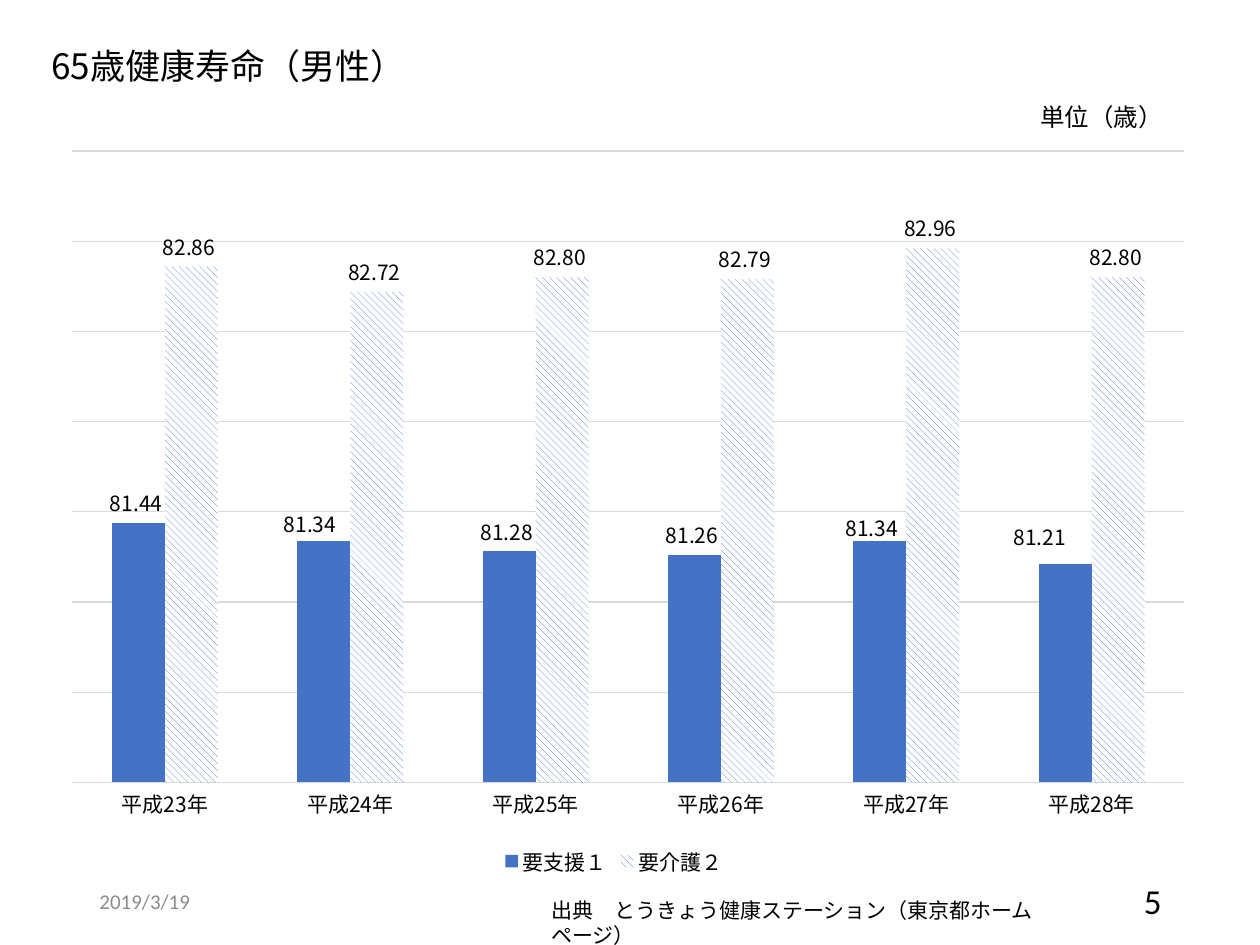
from pptx import Presentation
from pptx.chart.data import CategoryChartData
from pptx.dml.color import RGBColor
from pptx.enum.chart import XL_CHART_TYPE, XL_LABEL_POSITION, XL_LEGEND_POSITION, XL_TICK_MARK
from pptx.enum.dml import MSO_PATTERN
from pptx.enum.text import MSO_ANCHOR, MSO_AUTO_SIZE, PP_ALIGN
from pptx.oxml import parse_xml
from pptx.oxml.ns import nsdecls, qn
from pptx.util import Emu, Pt

COLUMN = XL_CHART_TYPE.COLUMN_CLUSTERED
OUTSIDE_END = XL_LABEL_POSITION.OUTSIDE_END
BOTTOM = XL_LEGEND_POSITION.BOTTOM
NO_TICK = XL_TICK_MARK.NONE
STRIPES = MSO_PATTERN.WIDE_DOWNWARD_DIAGONAL
TOP, MIDDLE = MSO_ANCHOR.TOP, MSO_ANCHOR.MIDDLE
GROW, FIXED = MSO_AUTO_SIZE.SHAPE_TO_FIT_TEXT, MSO_AUTO_SIZE.NONE
LEFT, RIGHT = PP_ALIGN.LEFT, PP_ALIGN.RIGHT

BLACK = RGBColor(0x00, 0x00, 0x00)
WHITE = RGBColor(0xFF, 0xFF, 0xFF)
BLUE = RGBColor(0x44, 0x72, 0xC4)
LIGHT_GRAY = RGBColor(0xD9, 0xD9, 0xD9)
GRAY = RGBColor(0x8C, 0x8C, 0x8C)

JAPANESE = "Noto Sans CJK JP"
LATIN = "Calibri"
NUMBER_FORMAT = r"0.00_);[Red]\(0.00\)"
EMU_PER_PX = 914400 / 126

YEARS = [f"平成{year}年" for year in range(23, 29)]
SERIES = {
    "要支援１": (81.44, 81.34, 81.28, 81.26, 81.34, 81.21),
    "要介護２": (82.86, 82.72, 82.80, 82.79, 82.96, 82.80),
}
LABEL_SHIFTS = {1: (-0.01, 0.005), 4: (-0.005, 0.01), 5: (-0.02, -0.01)}


def px(*lengths):
    return [Emu(round(length * EMU_PER_PX)) for length in lengths]


def style_font(font, size, color=BLACK, name=JAPANESE):
    for attribute, value in {"size": Pt(size), "name": name}.items():
        setattr(font, attribute, value)
    font.color.rgb = color


def add_text(slide, box, text, size, color=BLACK, name=JAPANESE, **options):
    text_box = slide.shapes.add_textbox(*px(*box))
    frame = text_box.text_frame
    settings = {"word_wrap": True, "auto_size": GROW, "vertical_anchor": TOP}
    alignment = options.pop("alignment", LEFT)
    for attribute, value in (settings | options).items():
        setattr(frame, attribute, value)
    paragraph = frame.paragraphs[0]
    paragraph.alignment = alignment
    run = paragraph.add_run()
    run.text = text
    style_font(run.font, size, color, name)


def make_layout(**values):
    children = "".join(f'<c:{tag} val="{value}"/>' for tag, value in values.items())
    return parse_xml(
        f"<c:layout {nsdecls('c')}><c:manualLayout>{children}</c:manualLayout></c:layout>"
    )


def style_line(line):
    line.color.rgb = LIGHT_GRAY
    line.width = Pt(0.75)


def style_axes(chart):
    category_axis, value_axis = chart.category_axis, chart.value_axis
    category_axis.major_tick_mark = NO_TICK
    style_font(category_axis.tick_labels.font, 12)
    style_line(category_axis.format.line)
    settings = {
        "minimum_scale": 80,
        "maximum_scale": 83.5,
        "major_unit": 0.5,
        "has_major_gridlines": True,
        "visible": False,
    }
    for attribute, value in settings.items():
        setattr(value_axis, attribute, value)
    style_line(value_axis.major_gridlines.format.line)


def style_labels(series):
    labels = series.data_labels
    settings = {
        "show_value": True,
        "number_format": NUMBER_FORMAT,
        "number_format_is_linked": False,
        "position": OUTSIDE_END,
    }
    for attribute, value in settings.items():
        setattr(labels, attribute, value)
    style_font(labels.font, 12)


def shift_label(series, index, x, y):
    label = series.points[index].data_label
    label.position = OUTSIDE_END
    style_font(label.font, 12)
    element = series.data_labels._element.xpath(f'c:dLbl[c:idx/@val="{index}"]')[0]
    element.find(qn("c:idx")).addnext(make_layout(x=x, y=y))


def add_east_asian_font(chart):
    for latin in chart._chartSpace.iter(qn("a:latin")):
        if latin.get("typeface") == JAPANESE:
            latin.addnext(parse_xml(f'<a:ea {nsdecls("a")} typeface="{JAPANESE}"/>'))


def add_life_chart(slide, box):
    data = CategoryChartData(number_format=NUMBER_FORMAT)
    data.categories = YEARS
    for name, values in SERIES.items():
        data.add_series(name, values)
    chart = slide.shapes.add_chart(COLUMN, *px(*box), data).chart
    chart.has_title = False
    style_font(chart.font, 10, name=LATIN)
    style_axes(chart)

    chart.has_legend = True
    chart.legend.position = BOTTOM
    chart.legend.include_in_layout = False
    style_font(chart.legend.font, 12)

    plot = chart.plots[0]
    for attribute, value in {"gap_width": 150, "overlap": 0, "vary_by_categories": False}.items():
        setattr(plot, attribute, value)
    support, care = plot.series
    support.format.fill.solid()
    support.format.fill.fore_color.rgb = BLUE
    pattern = care.format.fill
    pattern.patterned()
    pattern.pattern = STRIPES
    pattern.fore_color.rgb = BLUE
    pattern.back_color.rgb = WHITE
    for series in (support, care):
        style_labels(series)
    for index, shift in LABEL_SHIFTS.items():
        shift_label(support, index, *shift)

    plot_area = chart._chartSpace.chart.plotArea
    for layout in plot_area.findall(qn("c:layout")):
        plot_area.remove(layout)
    plot_area.insert(0, make_layout(
        layoutTarget="inner", xMode="edge", yMode="edge", x=0.029, y=0.037, w=0.967, h=0.832
    ))
    add_east_asian_font(chart)


def main():
    presentation = Presentation()
    presentation.slide_width, presentation.slide_height = px(1260, 945)
    slide = presentation.slides.add_slide(presentation.slide_layouts[6])
    footer = {"name": LATIN, "auto_size": FIXED, "vertical_anchor": MIDDLE}
    add_text(slide, (39, 38, 921, 55), "65歳健康寿命（男性）", 20)
    add_life_chart(slide, (39, 123, 1150, 759))
    add_text(slide, (539, 891, 532, 38), "出典　とうきょう健康ステーション（東京都ホームページ）", 12)
    add_text(slide, (1028, 96, 205, 43), "単位（歳）", 14)
    add_text(slide, (890, 876, 284, 50), "5", 20, alignment=RIGHT, **footer)
    add_text(slide, (87, 876, 284, 50), "2019/3/19", 12, GRAY, **footer)
    presentation.save("out.pptx")


if __name__ == "__main__":
    main()
